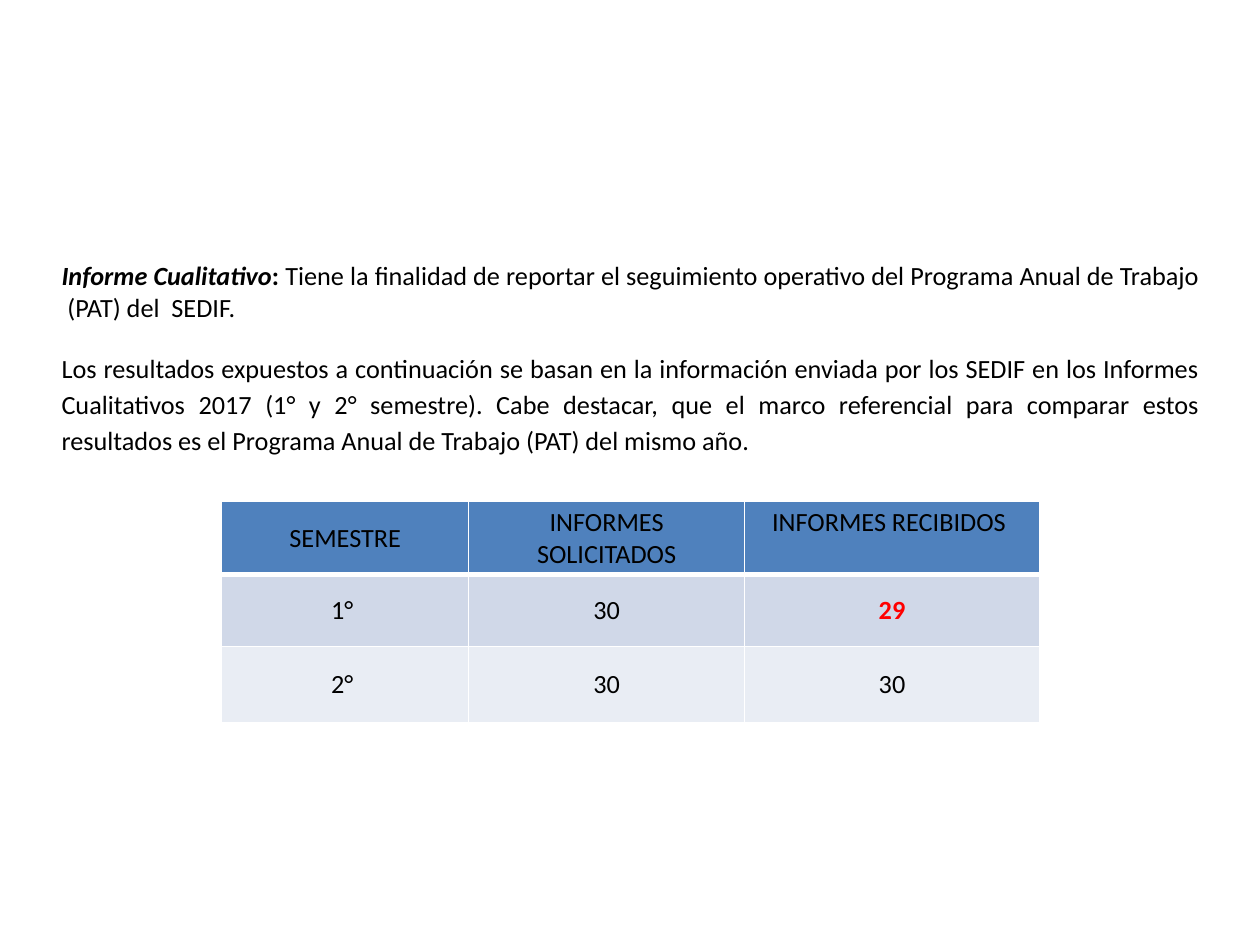
from lxml.etree import SubElement
from pptx import Presentation
from pptx.dml.color import RGBColor
from pptx.enum.text import MSO_ANCHOR, PP_ALIGN
from pptx.oxml.ns import qn
from pptx.util import Inches, Pt

# Content
COLORS = {"text": "000000", "alert": "FF0000", "border": "FFFFFF",
          "header": "4F81BD", "odd": "D0D8E8", "even": "E9EDF4"}
BASE_FONT = {"name": "Calibri", "size": Pt(15), "bold": False, "italic": False}

# Each paragraph: top, height, line spacing, runs of (text, font changes)
PARAGRAPHS = [
    (2.01, 0.61, None, [
        ("Informe Cualitativo", {"bold": True, "italic": True}),
        (": ", {"bold": True}),
        ("Tiene la finalidad de reportar el seguimiento operativo del Programa "
         "Anual de Trabajo  (PAT) del  SEDIF.", {}),
    ]),
    (2.71, 0.97, 1.15, [
        ("Los resultados expuestos a continuación se basan en la información "
         "enviada por los SEDIF en los Informes Cualitativos 2017 (1° y 2° "
         "semestre). Cabe destacar, que el marco referencial para comparar estos "
         "resultados es el Programa Anual de Trabajo (PAT) del mismo año.", {}),
    ]),
]
REPORTS = [
    ("SEMESTRE", "INFORMES SOLICITADOS", "INFORMES RECIBIDOS "),
    ("1° ", "30", "29"),
    ("2° ", "30", "30"),
]
ROW_FILLS = ("header", "odd", "even")
MISSING_REPORT = (1, 2)
COLUMN_WIDTHS = (1.96, 2.19, 2.34)
ROW_HEIGHTS = (0.57, 0.57, 0.61)
CELL_MARGINS = {"margin_left": 0.07, "margin_right": 0.07,
                "margin_top": 0.04, "margin_bottom": 0.04}


def add_text(paragraph, text, color="text", **changes):
    run = paragraph.add_run()
    run.text = text
    for attribute, value in {**BASE_FONT, **changes}.items():
        setattr(run.font, attribute, value)
    run.font.color.rgb = RGBColor.from_string(COLORS[color])


def add_borders(cell, bottom_width):
    properties = cell._tc.get_or_add_tcPr()
    for side, width in (("L", 1), ("R", 1), ("T", 1), ("B", bottom_width)):
        line = SubElement(properties, qn(f"a:ln{side}"), w=str(Pt(width)))
        fill = SubElement(line, qn("a:solidFill"))
        SubElement(fill, qn("a:srgbClr"), val=COLORS["border"])


presentation = Presentation()
presentation.slide_width = Inches(10)
presentation.slide_height = Inches(7.5)
slide = presentation.slides.add_slide(presentation.slide_layouts[6])

# Explanatory paragraphs
for top, height, spacing, runs in PARAGRAPHS:
    explanation = slide.shapes.add_textbox(
        Inches(0.39), Inches(top), Inches(9.23), Inches(height)).text_frame
    explanation.word_wrap = True
    paragraph = explanation.paragraphs[0]
    paragraph.alignment = PP_ALIGN.JUSTIFY
    paragraph.line_spacing = spacing
    for text, changes in runs:
        add_text(paragraph, text, **changes)

# Table of reports per semester
reports = slide.shapes.add_table(
    len(REPORTS), len(COLUMN_WIDTHS), Inches(1.76), Inches(3.98),
    Inches(sum(COLUMN_WIDTHS)), Inches(sum(ROW_HEIGHTS))).table
for column, width in zip(reports.columns, COLUMN_WIDTHS):
    column.width = Inches(width)
for row, height in zip(reports.rows, ROW_HEIGHTS):
    row.height = Inches(height)

for r, labels in enumerate(REPORTS):
    for c, label in enumerate(labels):
        cell = reports.cell(r, c)
        is_header = r == 0
        is_missing = (r, c) == MISSING_REPORT
        add_borders(cell, 3 if is_header else 1)
        cell.fill.solid()
        cell.fill.fore_color.rgb = RGBColor.from_string(COLORS[ROW_FILLS[r]])
        for margin, value in CELL_MARGINS.items():
            setattr(cell, margin, Inches(value))
        cell.vertical_anchor = MSO_ANCHOR.TOP if is_header else MSO_ANCHOR.MIDDLE
        paragraph = cell.text_frame.paragraphs[0]
        paragraph.alignment = PP_ALIGN.CENTER
        if is_header and c == 0:
            paragraph.line_spacing = 1.5
        add_text(paragraph, label, "alert" if is_missing else "text",
                 bold=is_missing)

presentation.save("out.pptx")
